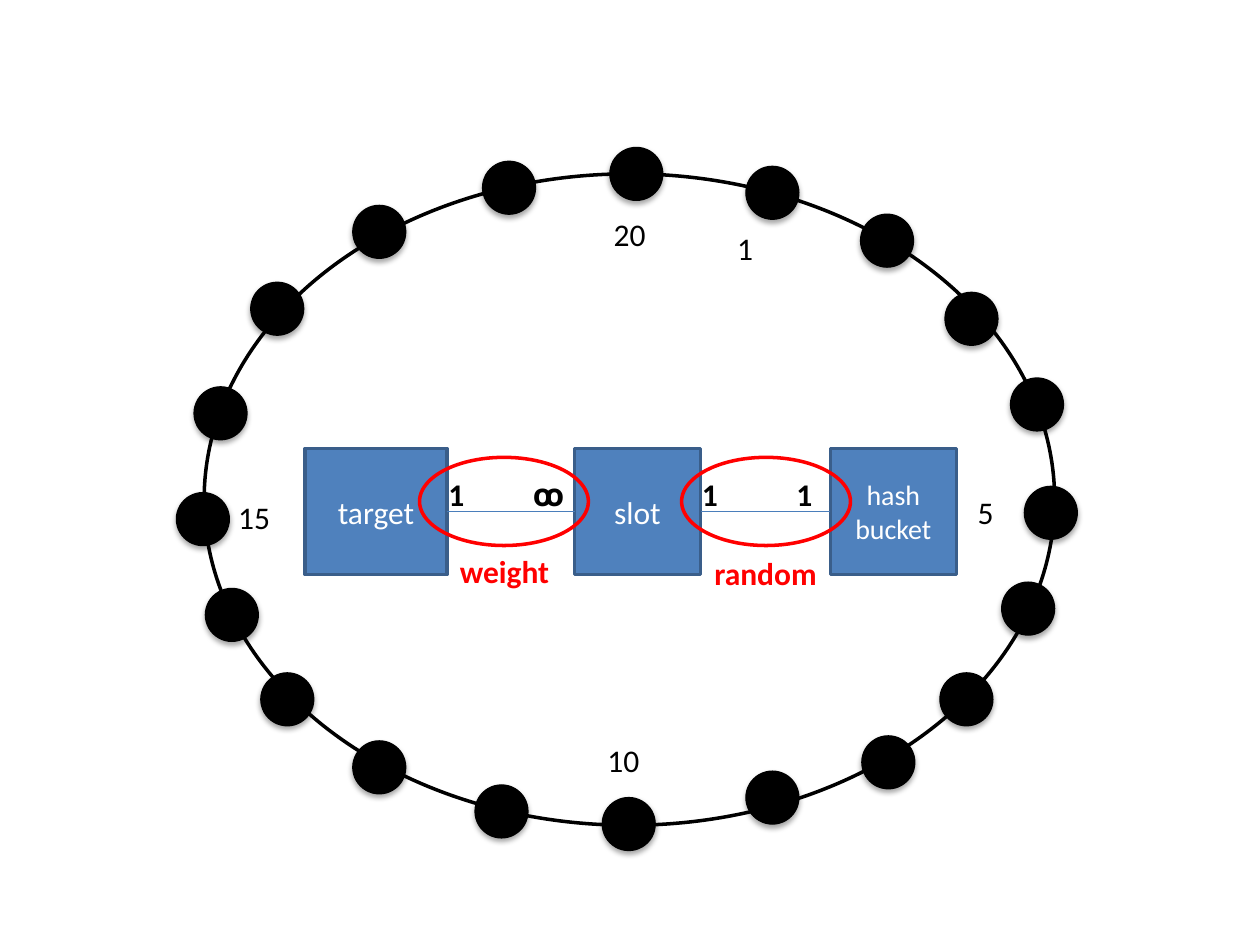
import dataclasses
import typing

import lxml.etree
import pptx
import pptx.dml.color
import pptx.enum.shapes
import pptx.enum.text
import pptx.oxml
import pptx.oxml.ns
import pptx.util

Inches = pptx.util.Inches
Pt = pptx.util.Pt
SHAPE = pptx.enum.shapes.MSO_SHAPE
qn = pptx.oxml.ns.qn

COLORS = {
    "black": "000000",
    "white": "FFFFFF",
    "red": "FF0000",
    "box": "4F81BD",
    "box_edge": "3A5E8A",
    "link": "4A7EBB",
}
FONT = "Calibri"
DOT_SIZE = 0.42
BOX_TOP, BOX_HEIGHT = 3.56, 1
LINK_Y = BOX_TOP + BOX_HEIGHT / 2


@dataclasses.dataclass
class Label:
    text: str
    left: float
    top: float
    width: float
    height: float = 0.39
    color: str = "black"
    bold: bool = False
    size: int = 18


@dataclasses.dataclass
class Box:
    text: str
    left: float
    width: float
    text_height: float = 0.39
    size: int = 18


@dataclasses.dataclass
class Callout:
    left: float
    label: Label


DOTS = [
    (4.84, 1.17), (5.92, 1.32), (6.83, 1.7), (7.5, 2.32), (8.02, 3),
    (8.13, 3.86), (7.95, 4.62), (7.46, 5.34), (6.84, 5.84), (5.92, 6.12),
    (4.78, 6.33), (3.77, 6.23), (2.8, 5.88), (2.07, 5.34), (1.63, 4.67),
    (1.4, 3.91), (1.54, 3.07), (1.99, 2.24), (2.8, 1.63), (3.83, 1.28),
]
SLOT_NUMBERS = [
    Label("1", 5.8, 1.77, 0.24),
    Label("5", 7.71, 3.86, 0.24),
    Label("10", 4.77, 5.83, 0.38),
    Label("15", 1.84, 3.9, 0.38),
    Label("20", 4.82, 1.66, 0.38),
]
BOXES = [
    Box("target", 2.42, 1.13),
    Box("slot", 4.56, 1),
    Box("hash bucket", 6.59, 1, 0.64, 16),
]
CARDINALITIES = [
    Label("1", 3.51, 3.72, 0.26, bold=True),
    Label("ꝏ", 4.18, 3.72, 0.33, 0.36, bold=True),
    Label("1", 5.52, 3.72, 0.26, bold=True),
    Label("1", 6.27, 3.72, 0.26, bold=True),
]
CALLOUTS = [
    Callout(3.33, Label("weight", 3.6, 4.33, 0.9, color="red", bold=True)),
    Callout(5.41, Label("random", 5.62, 4.35, 1, color="red", bold=True)),
]


def rgb(name: str) -> pptx.dml.color.RGBColor:
    return pptx.dml.color.RGBColor.from_string(COLORS[name])


def add_shape(shapes: typing.Any, kind: typing.Any, left: float, top: float,
              width: float, height: float, fill: typing.Optional[str],
              line: str, weight: float = 2) -> typing.Any:
    sp = shapes.add_shape(kind, Inches(left), Inches(top), Inches(width), Inches(height))
    sp.shadow.inherit = False
    if fill:
        sp.fill.solid()
        sp.fill.fore_color.rgb = rgb(fill)
    else:
        sp.fill.background()
    sp.line.color.rgb = rgb(line)
    sp.line.width = Pt(weight)
    return sp


def add_label(shapes: typing.Any, label: Label, centered: bool = False) -> None:
    sp = shapes.add_textbox(Inches(label.left), Inches(label.top),
                            Inches(label.width), Inches(label.height))
    tf = sp.text_frame
    tf.text = label.text
    tf.word_wrap = centered
    tf.auto_size = pptx.enum.text.MSO_AUTO_SIZE.SHAPE_TO_FIT_TEXT
    tf.margin_left = tf.margin_right = tf.margin_top = tf.margin_bottom = Inches(0.05)
    p = tf.paragraphs[0]
    if centered:
        tf.vertical_anchor = pptx.enum.text.MSO_ANCHOR.MIDDLE
        p.alignment = pptx.enum.text.PP_ALIGN.CENTER
    font = p.runs[0].font
    font.name = FONT
    font.size = Pt(label.size)
    font.bold = label.bold
    font.color.rgb = rgb(label.color)


def add_dot(shapes: typing.Any, left: float, top: float) -> None:
    sp = add_shape(shapes, SHAPE.OVAL, left, top, DOT_SIZE, DOT_SIZE, "black", "black", 0.75)
    effects = sp._element.spPr.find(qn("a:effectLst"))
    shadow = lxml.etree.SubElement(effects, qn("a:outerShdw"), blurRad=str(Pt(3)),
                                   dist=str(Pt(1.8)), dir="5400000", rotWithShape="0")
    color = lxml.etree.SubElement(shadow, qn("a:srgbClr"), val=COLORS["black"])
    lxml.etree.SubElement(color, qn("a:alpha"), val="35000")


def add_box(shapes: typing.Any, box: Box) -> None:
    add_shape(shapes, SHAPE.RECTANGLE, box.left, BOX_TOP, box.width, BOX_HEIGHT,
              "box", "box_edge")
    top = LINK_Y - box.text_height / 2
    add_label(shapes, Label(box.text, box.left, top, box.width, box.text_height,
                            "white", size=box.size), centered=True)


def add_link(shapes: typing.Any, start: Box, end: Box) -> None:
    line = shapes.add_connector(pptx.enum.shapes.MSO_CONNECTOR.STRAIGHT,
                                Inches(start.left + start.width), Inches(LINK_Y),
                                Inches(end.left), Inches(LINK_Y))
    line.line.color.rgb = rgb("link")
    line.line.width = Pt(0.75)
    lxml.etree.SubElement(line._element.spPr, qn("a:effectLst"))


def add_callout(shapes: typing.Any, callout: Callout) -> None:
    add_shape(shapes, SHAPE.OVAL, callout.left, 3.63, 1.34, 0.7, None, "red")
    add_label(shapes, callout.label)


def main() -> None:
    prs = pptx.Presentation()
    prs.slide_width, prs.slide_height = Inches(10), Inches(7.5)
    s = prs.slides.add_slide(prs.slide_layouts[6])

    add_shape(s.shapes, SHAPE.OVAL, 1.62, 1.38, 6.75, 5.17, "white", "black")
    ring = s.shapes.add_group_shape().shapes
    for left, top in DOTS:
        add_dot(ring, left, top)
    for label in SLOT_NUMBERS:
        add_label(s.shapes, label)

    diagram = s.shapes.add_group_shape().shapes
    for box in BOXES:
        add_box(diagram, box)
    for start, end in zip(BOXES, BOXES[1:]):
        add_link(diagram, start, end)
    for label in CARDINALITIES:
        add_label(diagram, label)
    for callout in CALLOUTS:
        add_callout(s.shapes.add_group_shape().shapes, callout)

    prs.save("out.pptx")


if __name__ == "__main__":
    main()
